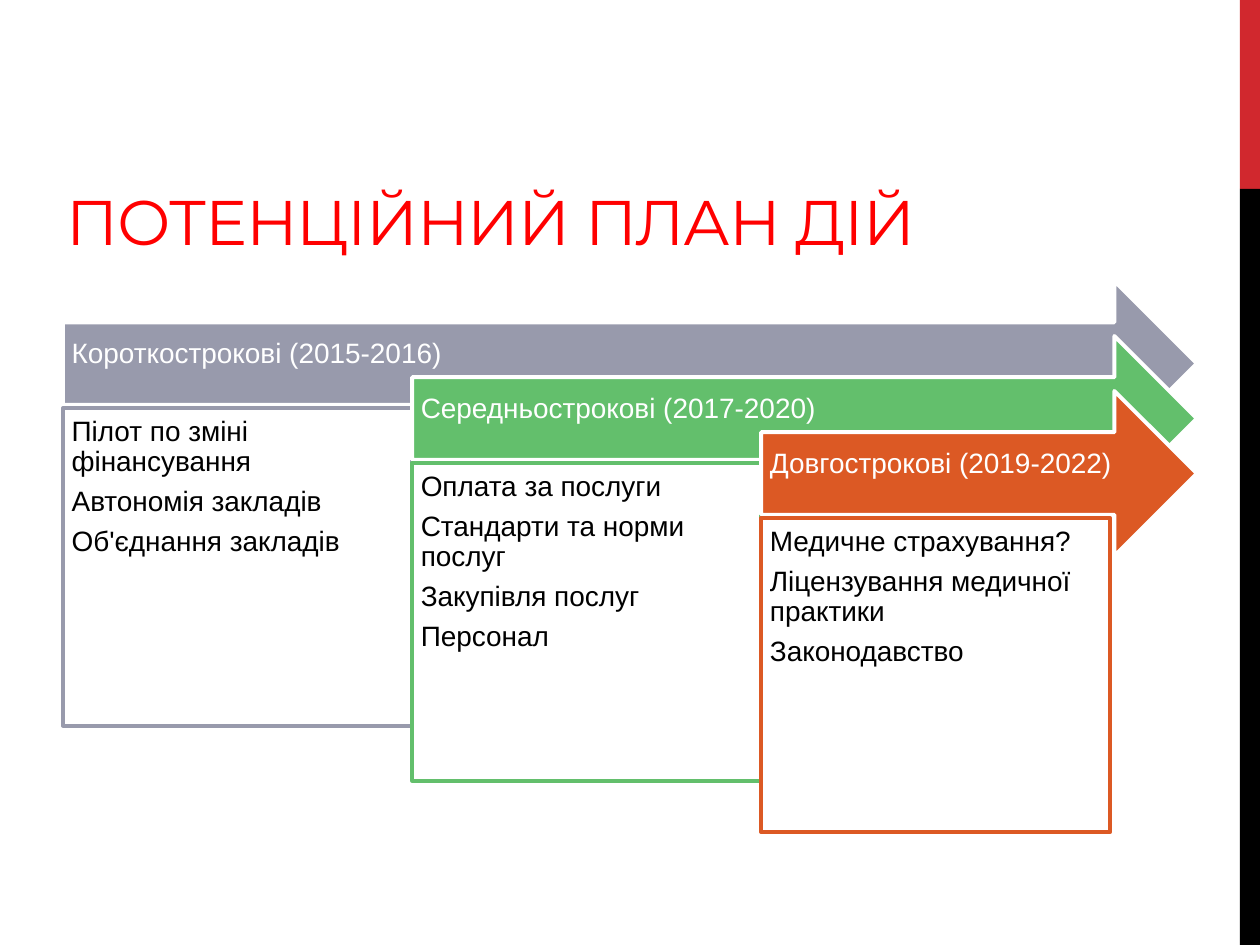
import pptx
import pptx.util
import pptx.dml.color
import pptx.enum.shapes
import pptx.enum.text

Pt = pptx.util.Pt
RGBColor = pptx.dml.color.RGBColor
Shape = pptx.enum.shapes.MSO_SHAPE
Anchor = pptx.enum.text.MSO_ANCHOR
Align = pptx.enum.text.PP_ALIGN

WHITE = RGBColor(0xFF, 0xFF, 0xFF)
BLACK = RGBColor(0x00, 0x00, 0x00)
TITLE_RED = RGBColor(0xFF, 0x00, 0x00)
BAND_RED = RGBColor(0xD1, 0x28, 0x2E)
GREY = RGBColor(0x98, 0x9A, 0xAC)
GREEN = RGBColor(0x63, 0xBF, 0x6C)
ORANGE = RGBColor(0xDC, 0x59, 0x24)

PHASES = [
    ("Короткострокові (2015-2016)", GREY, 181.4,
     ["Пілот по зміні фінансування", "Автономія закладів", "Об'єднання закладів"]),
    ("Середньострокові (2017-2020)", GREEN, 181.4,
     ["Оплата за послуги", "Стандарти та норми послуг", "Закупівля послуг", "Персонал"]),
    ("Довгострокові (2019-2022)", ORANGE, 179.3,
     ["Медичне страхування?", "Ліцензування медичної практики", "Законодавство"]),
]
LEFT, RIGHT = 36, 684
COLUMN = 199.5
STEP = 31.4
ARROW_TOP, ARROW_HEIGHT = 160.6, 94.3
BOX_TOP = 233.3


def add_block(kind, left, top, width, height, fill, line=None):
    """Add a flat shape, outlined only when a line colour is given."""
    block = page.shapes.add_shape(kind, Pt(left), Pt(top), Pt(width), Pt(height))
    block.shadow.inherit = False
    block.fill.solid()
    block.fill.fore_color.rgb = fill
    if line is None:
        block.line.fill.background()
    else:
        block.line.color.rgb = line
        block.line.width = Pt(2.25)
    return block


def write_lines(block, lines, color, anchor, right=5, bottom=5):
    frame = block.text_frame
    frame.word_wrap = True
    frame.vertical_anchor = anchor
    frame.margin_left = frame.margin_top = Pt(5)
    frame.margin_right, frame.margin_bottom = Pt(right), Pt(bottom)
    frame.text = "\n".join(lines)
    for para in frame.paragraphs:
        para.alignment = Align.LEFT
        para.line_spacing = 0.9
        para.space_after = Pt(5.6)
        para.font.name = "Arial"
        para.font.size = Pt(16)
        para.font.color.rgb = color


deck = pptx.Presentation()
deck.slide_width, deck.slide_height = Pt(720), Pt(540)
page = deck.slides.add_slide(deck.slide_layouts[5])

add_block(Shape.RECTANGLE, 708.5, 0, 11.5, 108, BAND_RED)
add_block(Shape.RECTANGLE, 708.5, 108, 11.5, 432, BLACK)

title = page.shapes.title
title.left, title.top, title.width, title.height = Pt(31), Pt(43.2), Pt(568), Pt(108)
title.text_frame.text = "ПОТЕНЦІЙНИЙ ПЛАН ДІЙ"
title.text_frame.auto_size = pptx.enum.text.MSO_AUTO_SIZE.NONE
title.text_frame.vertical_anchor = Anchor.BOTTOM
para = title.text_frame.paragraphs[0]
para.alignment = Align.LEFT
span = para.runs[0]
span.font.name = "Montserrat"
span.font.size = Pt(36)
span.font.color.rgb = TITLE_RED
span.font._element.set("spc", "-60")

for index, (period, color, box_height, actions) in enumerate(PHASES):
    left = LEFT + index * COLUMN
    drop = index * STEP
    arrow = add_block(Shape.RIGHT_ARROW, left, ARROW_TOP + drop, RIGHT - left,
                      ARROW_HEIGHT, color, WHITE)
    write_lines(arrow, [period], WHITE, Anchor.MIDDLE, right=20, bottom=15)
    box = add_block(Shape.RECTANGLE, left, BOX_TOP + drop, COLUMN, box_height, WHITE, color)
    write_lines(box, actions, BLACK, Anchor.TOP)

deck.save("out.pptx")
